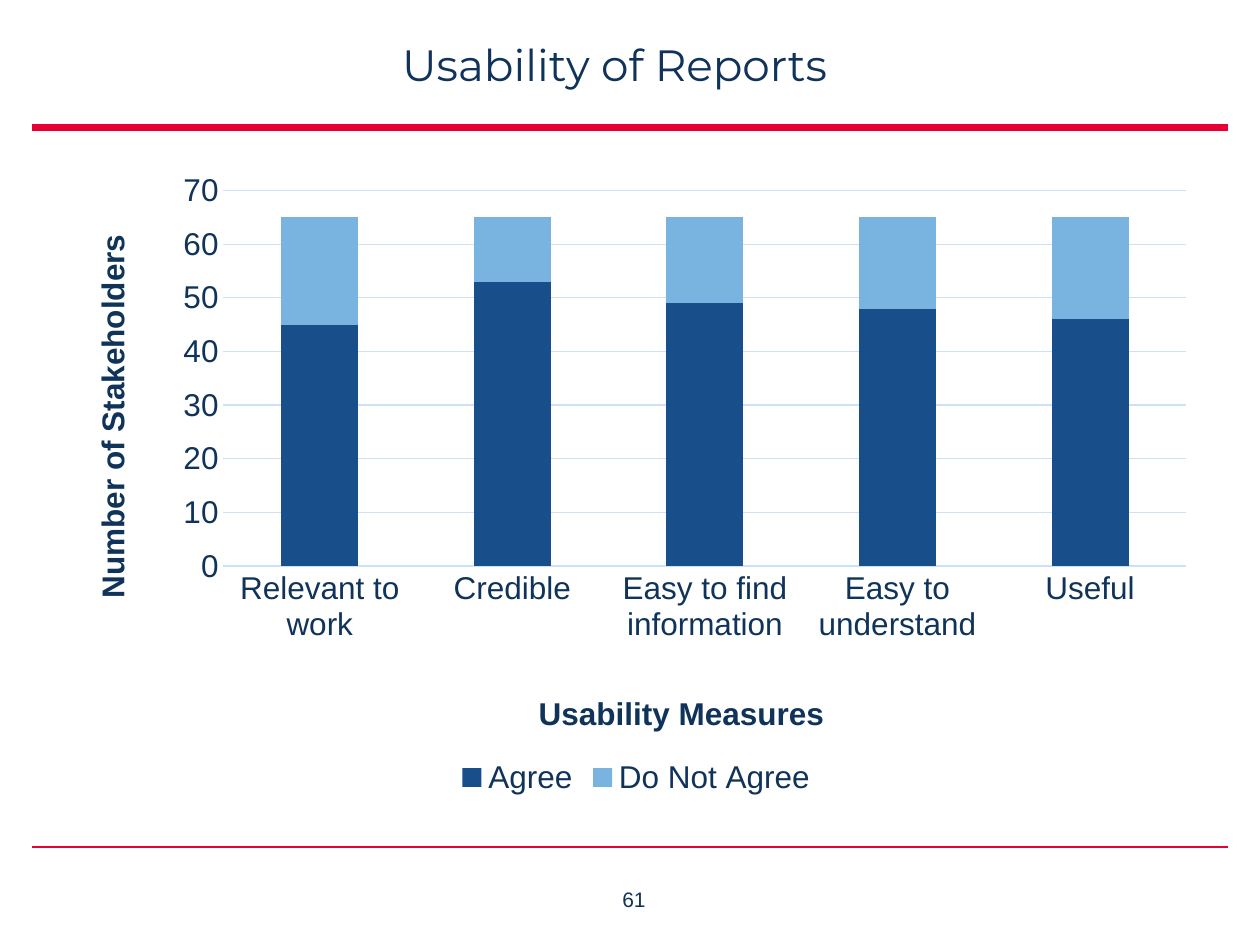
"""Build the slide on the usability of reports, with a stacked column chart."""
from lxml import etree
from pptx import Presentation
from pptx.chart.data import CategoryChartData
from pptx.dml.color import RGBColor
from pptx.enum.chart import XL_CHART_TYPE, XL_LEGEND_POSITION, XL_TICK_MARK
from pptx.enum.shapes import MSO_CONNECTOR
from pptx.enum.text import PP_ALIGN
from pptx.oxml import parse_xml
from pptx.oxml.ns import nsdecls, qn
from pptx.util import Cm, Pt

STACKED = XL_CHART_TYPE.COLUMN_STACKED
BOTTOM = XL_LEGEND_POSITION.BOTTOM
NO_TICK = XL_TICK_MARK.NONE
STRAIGHT = MSO_CONNECTOR.STRAIGHT
CENTER = PP_ALIGN.CENTER
COLORS = {
    "navy": "10335A",
    "red": "E70033",
    "grid": "CCE0F6",
    "agree": "184E8A",
    "disagree": "79B4E1",
}
RGB = {name: RGBColor.from_string(value) for name, value in COLORS.items()}

prs = Presentation()
prs.slide_width, prs.slide_height = Cm(25.4), Cm(19.05)
slide = prs.slides.add_slide(prs.slide_layouts[6])


def add_text(text, left, top, width, height, *, font, size, inset=0.0):
    box = slide.shapes.add_textbox(Cm(left), Cm(top), Cm(width), Cm(height))
    frame = box.text_frame
    frame.word_wrap = True
    frame.margin_left = frame.margin_right = Cm(inset)
    frame.margin_top = frame.margin_bottom = Cm(inset)
    paragraph = frame.paragraphs[0]
    paragraph.text = text
    paragraph.alignment = CENTER
    paragraph.font.name = font
    paragraph.font.size = Pt(size)
    paragraph.font.color.rgb = RGB["navy"]


def set_layout(parent, index, target=None, **fractions):
    for old in parent.findall(qn("c:layout")):
        parent.remove(old)
    layout = parse_xml(f"<c:layout {nsdecls('c')}><c:manualLayout/></c:layout>")
    settings = {"layoutTarget": target} if target else {}
    settings |= {"xMode": "edge", "yMode": "edge"} | fractions
    for tag, value in settings.items():
        etree.SubElement(layout[0], qn(f"c:{tag}")).set("val", str(value))
    parent.insert(index, layout)


for rule_y, weight in ((2.57, 4), (17.08, 1)):
    rule = slide.shapes.add_connector(
        STRAIGHT, Cm(0.64), Cm(rule_y), Cm(24.75), Cm(rule_y))
    rule.line.color.rgb = RGB["red"]
    rule.line.width = Pt(weight)
    etree.SubElement(rule._element.spPr, qn("a:effectLst"))

add_text("61", 11.51, 17.75, 2.54, 0.97, font="Arial", size=12, inset=0.13)
add_text("Usability of Reports", 0.64, 0.76, 23.5, 1.8, font="Montserrat", size=25)

usability = CategoryChartData()
usability.categories = ["Relevant to work", "Credible", "Easy to find information",
                        "Easy to understand", "Useful"]
usability.add_series("Agree", (45, 53, 49, 48, 46))
usability.add_series("Do Not Agree", (20, 12, 16, 17, 19))
chart = slide.shapes.add_chart(
    STACKED, Cm(1.27), Cm(3.33), Cm(23.11), Cm(12.83), usability).chart
chart.has_title = False
chart.font.name = "Arial"
chart.font.size = Pt(18)
chart.font.color.rgb = RGB["navy"]
chart.has_legend = True
chart.legend.position = BOTTOM
chart.legend.include_in_layout = False

columns = chart.plots[0]
columns.gap_width = 150
columns.overlap = 100
columns.vary_by_categories = False
for series, color in zip(columns.series, ("agree", "disagree")):
    series.format.fill.solid()
    series.format.fill.fore_color.rgb = RGB[color]

measures, stakeholders = chart.category_axis, chart.value_axis
for axis, title, x, y in ((measures, "Usability Measures", 0.41, 0.82),
                          (stakeholders, "Number of Stakeholders", 0.02, 0.1)):
    axis.major_tick_mark = axis.minor_tick_mark = NO_TICK
    heading = axis.axis_title.text_frame.paragraphs[0]
    heading.text = title
    heading_font = heading.runs[0].font
    heading_font.name = "Arial"
    heading_font.size = Pt(18)
    heading_font.bold = True
    heading_font.color.rgb = RGB["navy"]
    set_layout(axis.axis_title._element, 1, x=x, y=y)

stakeholders.minimum_scale, stakeholders.maximum_scale = 0, 70
stakeholders.major_unit = 10
stakeholders.format.line.fill.background()
for line in (measures.format.line, stakeholders.major_gridlines.format.line):
    line.color.rgb = RGB["grid"]
    line.width = Pt(0.75)
set_layout(chart._chartSpace.chart.plotArea, 0, "inner", x=0.14, y=0.04, w=0.84, h=0.59)

prs.save("out.pptx")
